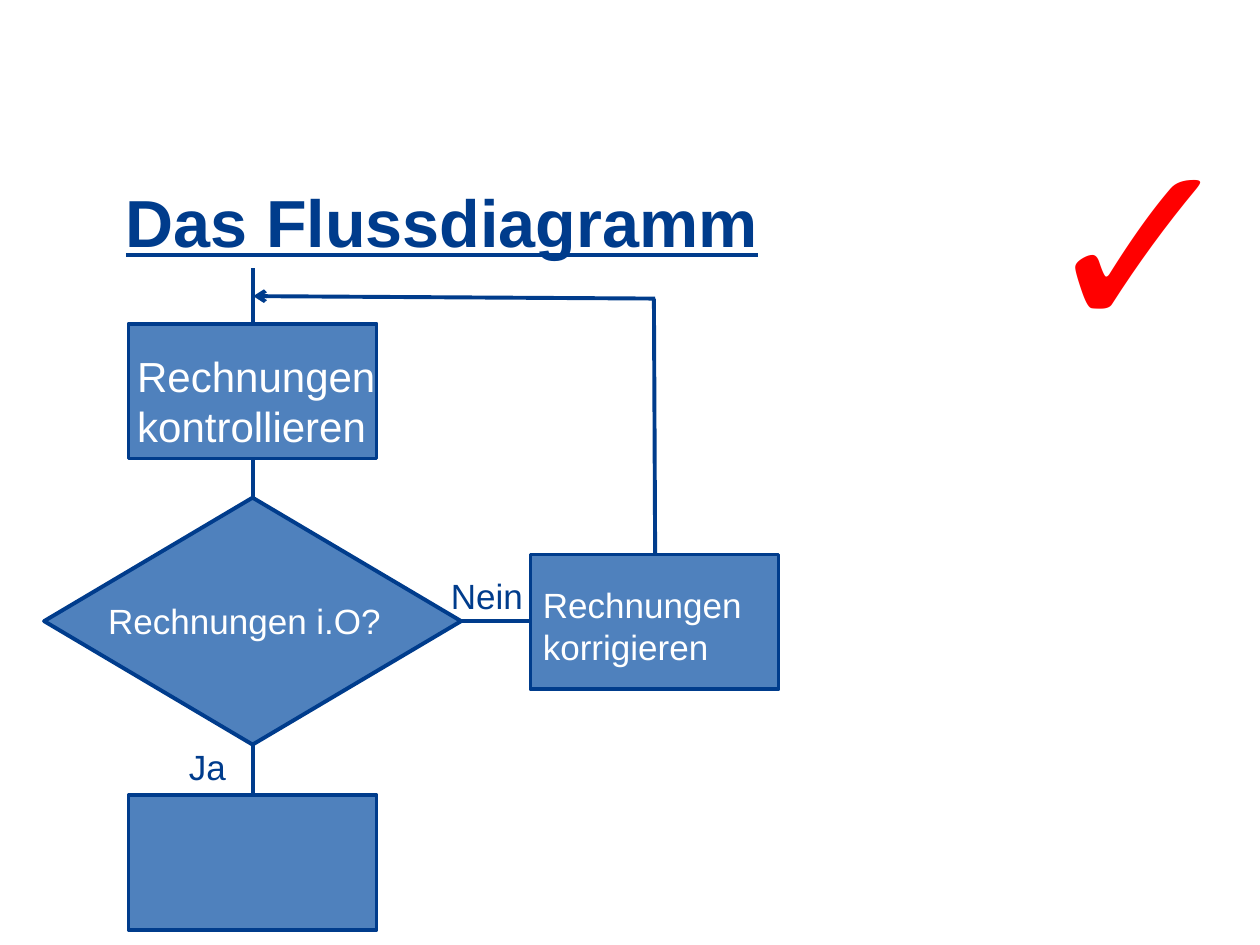
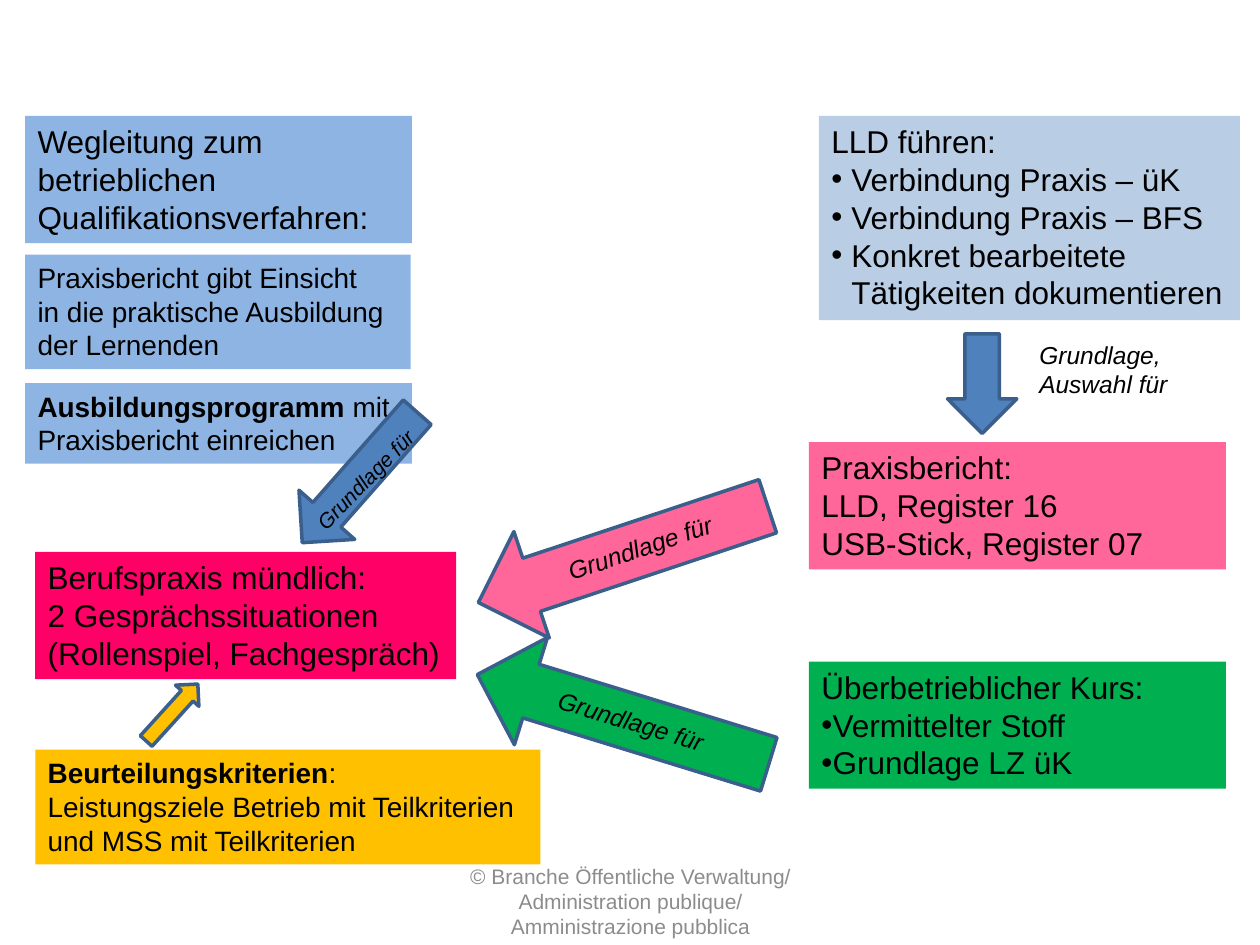
from lxml.etree import SubElement
from pptx import Presentation
from pptx.dml.color import RGBColor
from pptx.enum.shapes import MSO_CONNECTOR, MSO_SHAPE
from pptx.enum.text import MSO_ANCHOR, MSO_AUTO_SIZE, PP_ALIGN
from pptx.oxml.ns import qn
from pptx.util import Inches, Pt

FONT = "Arial"
NAVY = RGBColor(0x00, 0x3C, 0x8C)
STEEL = RGBColor(0x4F, 0x81, 0xBD)
ARROW_EDGE = RGBColor(0x3A, 0x5F, 0x8C)
SKY = RGBColor(0x8E, 0xB4, 0xE3)
PALE_BLUE = RGBColor(0xB9, 0xCD, 0xE5)
PINK = RGBColor(0xFF, 0x66, 0x99)
MAGENTA = RGBColor(0xFF, 0x00, 0x66)
GREEN = RGBColor(0x00, 0xB0, 0x50)
AMBER = RGBColor(0xFF, 0xC0, 0x00)
RED = RGBColor(0xFF, 0x00, 0x00)
GRAY = RGBColor(0x8C, 0x8C, 0x8C)
BLACK = RGBColor(0x00, 0x00, 0x00)
WHITE = RGBColor(0xFF, 0xFF, 0xFF)


def inches(values):
    return [Inches(value) for value in values]


def style(para, size, color, italic=None):
    para.font.name = FONT
    para.font.size = Pt(size)
    para.font.color.rgb = color
    para.font.italic = italic


def add_bullet(para, hang):
    properties = para._p.get_or_add_pPr()
    properties.set("marL", str(Inches(hang)))
    properties.set("indent", str(-Inches(hang)))
    SubElement(properties, qn("a:buFont"), typeface=FONT)
    SubElement(properties, qn("a:buChar"), char="•")


def add_text(page, box, lines, size, color=BLACK, fill=None, wrap=True,
             bold_lead="", italic=None, turn=0, hang=0):
    shape = page.shapes.add_textbox(*inches(box))
    shape.rotation = turn
    if fill is not None:
        shape.fill.solid()
        shape.fill.fore_color.rgb = fill
    frame = shape.text_frame
    frame.word_wrap = wrap
    frame.auto_size = MSO_AUTO_SIZE.SHAPE_TO_FIT_TEXT
    for index, line in enumerate(lines):
        para = frame.add_paragraph() if index else frame.paragraphs[0]
        if bold_lead and index == 0:
            span = para.add_run()
            span.text = bold_lead
            span.font.bold = True
            para.add_run().text = line
        else:
            para.text = line
        if hang and index:
            add_bullet(para, hang)
        style(para, size, color, italic)
    return shape


def add_outlined(page, kind, box, fill, edge, width=2, turn=0):
    shape = page.shapes.add_shape(kind, *inches(box))
    shape.shadow.inherit = False
    shape.fill.solid()
    shape.fill.fore_color.rgb = fill
    shape.line.color.rgb = edge
    shape.line.width = Pt(width)
    shape.rotation = turn


def add_line(page, start, end, arrow=False):
    line = page.shapes.add_connector(
        MSO_CONNECTOR.STRAIGHT, *inches(start), *inches(end))
    line.line.color.rgb = NAVY
    line.line.width = Pt(2.25)
    if arrow:
        SubElement(line.line._get_or_add_ln(), qn("a:tailEnd"), type="arrow")
    SubElement(line._element.spPr, qn("a:effectLst"))


def add_title(page, text):
    title = add_text(page, (0.9, 1.39, 8.74, 0.74), [text], 38, NAVY)
    font = title.text_frame.paragraphs[0].font
    font.bold = True
    font.underline = True


def add_footer(page, text):
    footer = add_text(page, (3.42, 6.95, 3.17, 0.4), [text], 12, GRAY)
    frame = footer.text_frame
    frame.auto_size = MSO_AUTO_SIZE.NONE
    frame.vertical_anchor = MSO_ANCHOR.MIDDLE
    frame.paragraphs[0].alignment = PP_ALIGN.CENTER


def add_flowchart(page, left, top):
    step_width, step_height = 1.97, 1.07
    axis, return_axis = left + 1.66, left + 4.85
    check_top, decision_top, next_top = top + 0.44, top + 1.82, top + 4.18
    decision_width, decision_height = 3.31, 1.96
    decision_middle = decision_top + decision_height / 2
    decision_bottom = decision_top + decision_height
    fix_left, fix_top = left + 3.86, top + 2.27
    step_left = left + 0.67

    add_outlined(page, MSO_SHAPE.FLOWCHART_DECISION,
                 (left, decision_top, decision_width, decision_height),
                 STEEL, NAVY, 2.25)
    add_line(page, (left + decision_width, decision_middle),
             (fix_left, decision_middle))
    add_line(page, (axis, decision_bottom), (axis, next_top))
    for step in ((fix_left, fix_top), (step_left, check_top),
                 (step_left, next_top)):
        add_outlined(page, MSO_SHAPE.FLOWCHART_PROCESS,
                     (*step, step_width, step_height), STEEL, NAVY)
    add_line(page, (axis, check_top + step_height), (axis, decision_top))
    add_line(page, (axis, top), (axis, check_top))
    add_line(page, (return_axis - 0.01, top + 0.24), (return_axis, fix_top))
    add_line(page, (return_axis, top + 0.24), (axis, top + 0.22), arrow=True)

    labels = (
        ("Rechnungen kontrollieren", 0.64, 0.6, 2.21, 0.91, 24, WHITE),
        ("Rechnungen i.O?", 0.41, 2.58, 2.43, 0.44, 20, WHITE),
        ("Rechnungen korrigieren", 3.86, 2.45, 1.89, 0.77, 20, WHITE),
        ("Ja", 1.05, 3.74, 0.55, 0.44, 20, NAVY),
        ("Nein", 3.13, 2.38, 0.87, 0.44, 20, NAVY),
    )
    for text, across, down, width, height, size, color in labels:
        add_text(page, (left + across, top + down, width, height),
                 [text], size, color)


def add_exam_column(page, left, top):
    add_text(page, (left, top, 3.07, 1.01),
             ["Wegleitung zum", "betrieblichen", "Qualifikationsverfahren:"],
             18, fill=SKY)
    add_text(page, (left, top + 1.1, 3.06, 0.91),
             ["Praxisbericht gibt Einsicht", "in die praktische Ausbildung",
              "der Lernenden"], 16, fill=SKY, wrap=False)
    add_text(page, (left, top + 2.12, 3.07, 0.64),
             [" mit", "Praxisbericht einreichen"], 16, fill=SKY,
             bold_lead="Ausbildungsprogramm")
    add_text(page, (left + 0.08, top + 3.46, 3.34, 1.01),
             ["Berufspraxis mündlich:", "2 Gesprächssituationen",
              "(Rollenspiel, Fachgespräch)"], 18, fill=MAGENTA, wrap=False)
    add_text(page, (left + 0.08, top + 5.03, 4.01, 0.91),
             [":", "Leistungsziele Betrieb mit Teilkriterien",
              "und MSS mit Teilkriterien"], 16, fill=AMBER, wrap=False,
             bold_lead="Beurteilungskriterien")


def add_training_column(page, left, top):
    add_text(page, (left + 0.08, top, 3.34, 1.62),
             ["LLD führen:", "Verbindung Praxis – üK",
              "Verbindung Praxis – BFS",
              "Konkret bearbeitete\vTätigkeiten dokumentieren"],
             18, fill=PALE_BLUE, wrap=False, hang=0.16)
    add_text(page, (left, top + 2.59, 3.31, 1.01),
             ["Praxisbericht:", "LLD, Register 16", "USB-Stick, Register 07"],
             18, fill=PINK)
    add_text(page, (left, top + 4.33, 3.31, 1.01),
             ["Überbetrieblicher Kurs:", "Vermittelter Stoff",
              "Grundlage LZ üK"], 18, fill=GREEN, hang=0.09)
    add_text(page, (left + 1.73, top + 1.73, 1.23, 0.57),
             ["Grundlage,", "Auswahl für"], 14, wrap=False, italic=True)


def add_block_arrows(page):
    arrows = (
        ((7.52, 2.65, 0.55, 0.79), 0, STEEL),
        ((4.5, 3.19, 0.89, 2.42), 71.6, PINK),
        ((4.5, 4.5, 0.89, 2.42), 107.1, GREEN),
        ((1.24, 5.35, 0.25, 0.61), 222.2, AMBER),
        ((2.56, 3.1, 0.59, 1.38), 41.4, STEEL),
    )
    for box, turn, fill in arrows:
        add_outlined(page, MSO_SHAPE.DOWN_ARROW, box, fill, ARROW_EDGE,
                     turn=turn)
    captions = (
        ((4.38, 4.15, 1.57, 0.34), 341.4, 14),
        ((4.31, 5.58, 1.57, 0.34), 16.9, 14),
        ((2.28, 3.63, 1.29, 0.3), 314.4, 12),
    )
    for box, turn, size in captions:
        add_text(page, box, ["Grundlage für"], size, italic=True, turn=turn)


def build_flowchart_slide(page):
    add_title(page, "Das Flussdiagramm")
    add_flowchart(page, 0.35, 2.13)
    add_text(page, (8.15, 0.67, 1.72, 2.42), ["✓"], 138, RED, wrap=False)


def build_overview_slide(page):
    add_footer(page, "© Branche Öffentliche Verwaltung/ "
                     "Administration publique/ Amministrazione pubblica")
    add_exam_column(page, 0.2, 0.92)
    add_training_column(page, 6.42, 0.92)
    add_block_arrows(page)


def main():
    deck = Presentation()
    deck.slide_width, deck.slide_height = Inches(10), Inches(7.5)
    for build in (build_flowchart_slide, build_overview_slide):
        build(deck.slides.add_slide(deck.slide_layouts[6]))
    deck.save("out.pptx")


if __name__ == "__main__":
    main()
